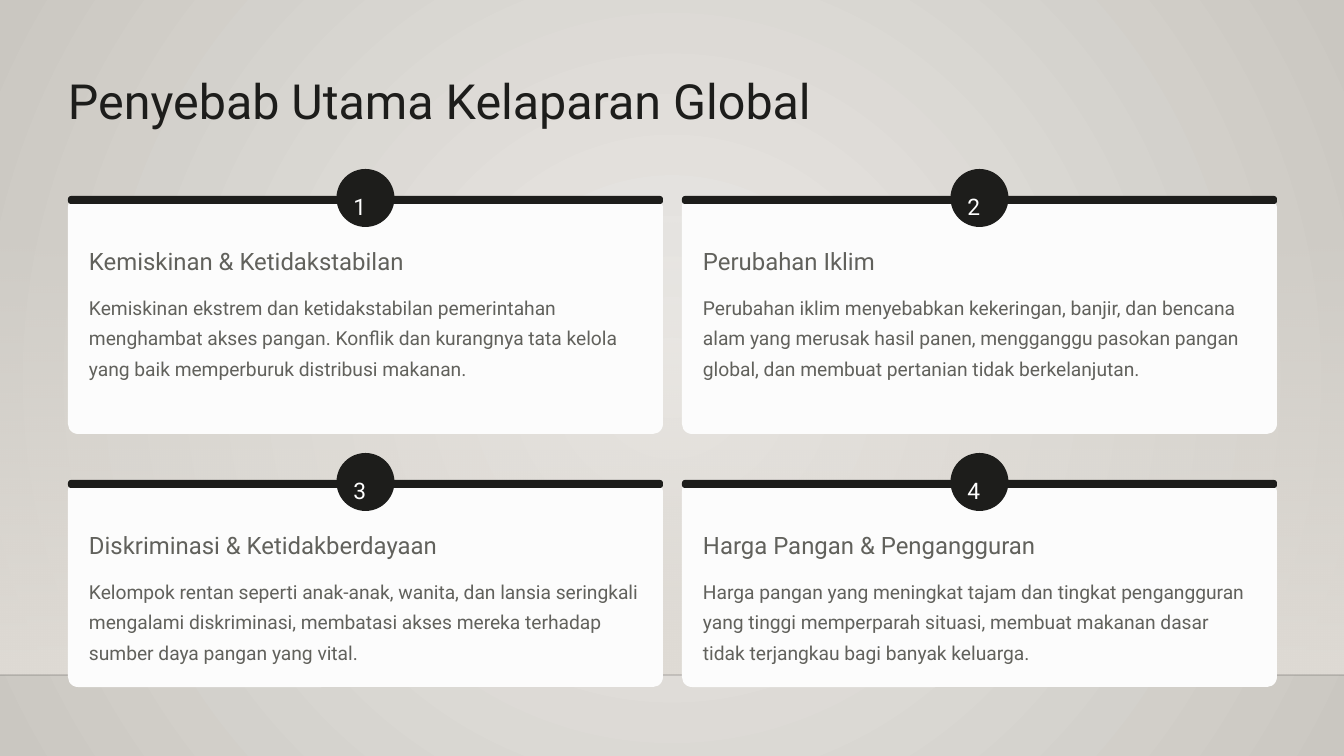
from lxml import etree
from pptx import Presentation
from pptx.dml.color import RGBColor
from pptx.enum.shapes import MSO_CONNECTOR, MSO_SHAPE
from pptx.enum.text import MSO_ANCHOR, MSO_AUTO_SIZE, PP_ALIGN
from pptx.oxml.ns import qn
from pptx.util import Pt

PX_PER_INCH = 84
WIDTH, HEIGHT = 1344, 756
FLOOR_TOP, FLOOR_LINE = 222, 675
FONT = "Roboto"

INK = RGBColor(0x1D, 0x1D, 0x1B)
GRAY = RGBColor(0x61, 0x61, 0x5C)
WHITE = RGBColor(0xFF, 0xFF, 0xFF)
CARD = RGBColor(0xFC, 0xFC, 0xFC)
BG_CENTER = RGBColor(0xEC, 0xEA, 0xE7)
BG_EDGE = RGBColor(0xCA, 0xC7, 0xC1)
FLOOR = RGBColor(0xDF, 0xDB, 0xD5)
LINE = RGBColor(0x00, 0x00, 0x01)

TITLE = "Penyebab Utama Kelaparan Global"
CAUSES = [
    ("Kemiskinan & Ketidakstabilan",
     "Kemiskinan ekstrem dan ketidakstabilan pemerintahan menghambat akses pangan. "
     "Konflik dan kurangnya tata kelola yang baik memperburuk distribusi makanan."),
    ("Perubahan Iklim",
     "Perubahan iklim menyebabkan kekeringan, banjir, dan bencana alam yang merusak hasil "
     "panen, mengganggu pasokan pangan global, dan membuat pertanian tidak berkelanjutan."),
    ("Diskriminasi & Ketidakberdayaan",
     "Kelompok rentan seperti anak-anak, wanita, dan lansia seringkali mengalami "
     "diskriminasi, membatasi akses mereka terhadap sumber daya pangan yang vital."),
    ("Harga Pangan & Pengangguran",
     "Harga pangan yang meningkat tajam dan tingkat pengangguran yang tinggi memperparah "
     "situasi, membuat makanan dasar tidak terjangkau bagi banyak keluarga."),
]
CARDS_LEFT, CARDS_TOP = 68, 196
CARD_WIDTH, COLUMN_STEP, ROW_STEP = 595, 614, 284
ROW_HEIGHTS = (238, 491 - 284)
BADGE = 58


def px(*values):
    return [round(v * 914400 / PX_PER_INCH) for v in values]


def set_text(sp, text, size, leading, color, wrap=False):
    tf = sp.text_frame
    tf.margin_left = tf.margin_top = tf.margin_right = tf.margin_bottom = 0
    tf.auto_size = MSO_AUTO_SIZE.NONE
    tf.word_wrap = wrap
    tf.vertical_anchor = MSO_ANCHOR.TOP
    p = tf.paragraphs[0]
    p.alignment = PP_ALIGN.LEFT
    p.line_spacing = Pt(leading)
    r = p.add_run()
    r.text = text
    r.font.name, r.font.size, r.font.color.rgb = FONT, Pt(size), color


def add_text(slide, box, text, **fmt):
    set_text(slide.shapes.add_textbox(*px(*box)), text, **fmt)


def add_block(slide, kind, box, color, radius=None):
    sp = slide.shapes.add_shape(kind, *px(*box))
    sp.shadow.inherit = False
    sp.line.fill.background()
    sp.fill.solid()
    sp.fill.fore_color.rgb = color
    if radius is not None:
        sp.adjustments[0] = radius / min(box[2:])
    return sp


def set_gradient(fill, *colors):
    fill.gradient()
    for stop, color in zip(fill.gradient_stops, colors):
        stop.color.rgb = color


def set_alpha(color_element, percent):
    etree.SubElement(color_element, qn("a:alpha"), val=str(percent * 1000))


def add_backdrop(slide):
    """Radial background, a band fading in downwards, and the floor line."""
    set_gradient(slide.background.fill, BG_CENTER, BG_EDGE)
    grad = slide.element.find(".//" + qn("a:gradFill"))
    grad.remove(grad.find(qn("a:lin")))
    radial = etree.SubElement(grad, qn("a:path"))
    radial.set("path", "circle")
    etree.SubElement(radial, qn("a:fillToRect"), l="50000", t="50000", r="50000", b="50000")

    band = add_block(slide, MSO_SHAPE.RECTANGLE,
                     (0, FLOOR_TOP, WIDTH, FLOOR_LINE - FLOOR_TOP), FLOOR)
    set_gradient(band.fill, FLOOR, FLOOR)
    band.fill.gradient_angle = 270
    set_alpha(band.element.find(".//" + qn("a:srgbClr")), 0)

    line = slide.shapes.add_connector(MSO_CONNECTOR.STRAIGHT,
                                      *px(0, FLOOR_LINE, WIDTH, FLOOR_LINE))
    line.line.width = Pt(1)
    line.line.color.rgb = LINE
    set_alpha(line.element.find(".//" + qn("a:srgbClr")), 20)
    etree.SubElement(line.element.spPr, qn("a:effectLst"))


def add_title(slide, box):
    sp = slide.shapes.title
    sp.left, sp.top, sp.width, sp.height = px(*box)
    set_text(sp, TITLE, size=41.5, leading=51.5, color=INK)


def add_card(slide, box, number, heading, body):
    x, y, w, h = box
    add_block(slide, MSO_SHAPE.ROUNDED_RECTANGLE, (x, y + 1, w, h - 1), CARD, radius=10)
    add_block(slide, MSO_SHAPE.ROUNDED_RECTANGLE, (x, y, w, 8), INK, radius=3)
    badge_x, badge_y = x + (w - BADGE) / 2, y - 27
    add_block(slide, MSO_SHAPE.OVAL, (badge_x, badge_y, BADGE, BADGE), INK)
    add_text(slide, (badge_x + 17, badge_y + 14, 24, 29), str(number),
             size=19.5, leading=31.5, color=WHITE)
    add_text(slide, (x + 21, y + 50, w - 43, 30), heading,
             size=20.5, leading=25.5, color=GRAY)
    add_text(slide, (x + 21, y + 92, w - 43, 93), body,
             size=16.5, leading=26.5, color=GRAY, wrap=True)


def main():
    prs = Presentation()
    prs.slide_width, prs.slide_height = px(WIDTH, HEIGHT)
    slide = prs.slides.add_slide(prs.slide_layouts[5])
    add_backdrop(slide)
    add_title(slide, (68, 69, 849, 60))
    for i, (heading, body) in enumerate(CAUSES):
        row, column = divmod(i, 2)
        box = (CARDS_LEFT + column * COLUMN_STEP, CARDS_TOP + row * ROW_STEP,
               CARD_WIDTH, ROW_HEIGHTS[row])
        add_card(slide, box, i + 1, heading, body)
    prs.save("out.pptx")


if __name__ == "__main__":
    main()
